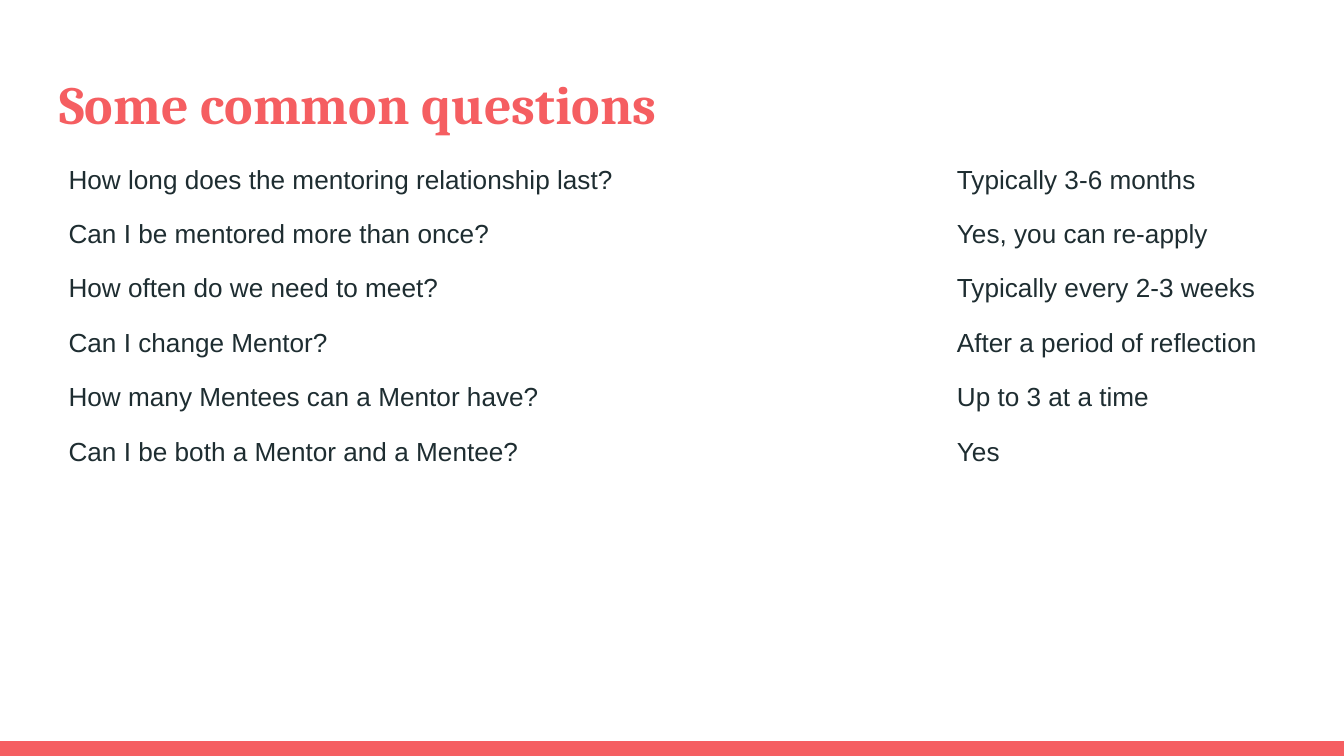
"""Build a slide of common mentoring questions with their answers."""
from lxml.etree import SubElement
from pptx import Presentation
from pptx.dml.color import RGBColor
from pptx.enum.shapes import MSO_SHAPE
from pptx.enum.text import MSO_ANCHOR, PP_ALIGN
from pptx.oxml.ns import qn
from pptx.util import Inches, Pt

TITLE = "Some common questions"
QUESTIONS = [
    ("How long does the mentoring relationship last?", "Typically 3-6 months"),
    ("Can I be mentored more than once?", "Yes, you can re-apply"),
    ("How often do we need to meet?", "Typically every 2-3 weeks"),
    ("Can I change Mentor?", "After a period of reflection"),
    ("How many Mentees can a Mentor have?", "Up to 3 at a time"),
    ("Can I be both a Mentor and a Mentee?", "Yes"),
]
COLORS = {"accent": "F55E61", "text": "1E2D31", "border": "FFFFFF"}
SLIDE_WIDTH = 10
SLIDE_HEIGHT = SLIDE_WIDTH * 9 / 16
BAR_HEIGHT = 0.11
COL_WIDTHS = [6.61, 2.71]
TABLE_HEIGHT = 2.43


def rgb(name):
    return RGBColor.from_string(COLORS[name])


def style(p, font, size, color, bold=False):
    for r in p.runs:
        r.font.name = font
        r.font.size = Pt(size)
        r.font.bold = bold
        r.font.color.rgb = rgb(color)


def add_borders(cell, bottom):
    tcPr = cell._tc.get_or_add_tcPr()
    for side, width in zip("LRTB", (1, 1, 1, bottom)):
        ln = SubElement(tcPr, qn(f"a:ln{side}"), w=str(Pt(width)))
        fill = SubElement(ln, qn("a:solidFill"))
        SubElement(fill, qn("a:srgbClr"), val=COLORS["border"])


def add_footer_bar(s):
    bar = s.shapes.add_shape(
        MSO_SHAPE.RECTANGLE, 0, Inches(SLIDE_HEIGHT - BAR_HEIGHT),
        Inches(SLIDE_WIDTH), Inches(BAR_HEIGHT))
    bar.shadow.inherit = False
    bar.fill.solid()
    bar.fill.fore_color.rgb = rgb("accent")
    bar.line.fill.background()


def set_title(s):
    title = s.shapes.title
    title.left, title.top = Inches(0.34), Inches(0.43)
    title.width, title.height = Inches(9.32), Inches(0.68)
    tf = title.text_frame
    tf.text = TITLE
    tf.word_wrap = True
    tf.vertical_anchor = MSO_ANCHOR.MIDDLE
    tf.margin_left = tf.margin_right = tf.margin_top = tf.margin_bottom = Inches(0.1)
    p = tf.paragraphs[0]
    p.alignment = PP_ALIGN.LEFT
    style(p, "Cambria", 28.8, "accent", bold=True)


def add_questions(s):
    table = s.shapes.add_table(
        len(QUESTIONS), len(COL_WIDTHS), Inches(0.41), Inches(1.18),
        Inches(sum(COL_WIDTHS)), Inches(TABLE_HEIGHT)).table
    table.first_row = table.horz_banding = False
    for col, width in zip(table.columns, COL_WIDTHS):
        col.width = Inches(width)
    for i, texts in enumerate(QUESTIONS):
        for j, text in enumerate(texts):
            cell = table.cell(i, j)
            cell.text = text
            style(cell.text_frame.paragraphs[0], "Arial", 14, "text")
            add_borders(cell, bottom=3 if i == 0 else 1)
            cell.fill.background()


def main():
    prs = Presentation()
    prs.slide_width, prs.slide_height = Inches(SLIDE_WIDTH), Inches(SLIDE_HEIGHT)
    s = prs.slides.add_slide(prs.slide_layouts[5])
    add_footer_bar(s)
    set_title(s)
    add_questions(s)
    prs.save("out.pptx")


if __name__ == "__main__":
    main()
